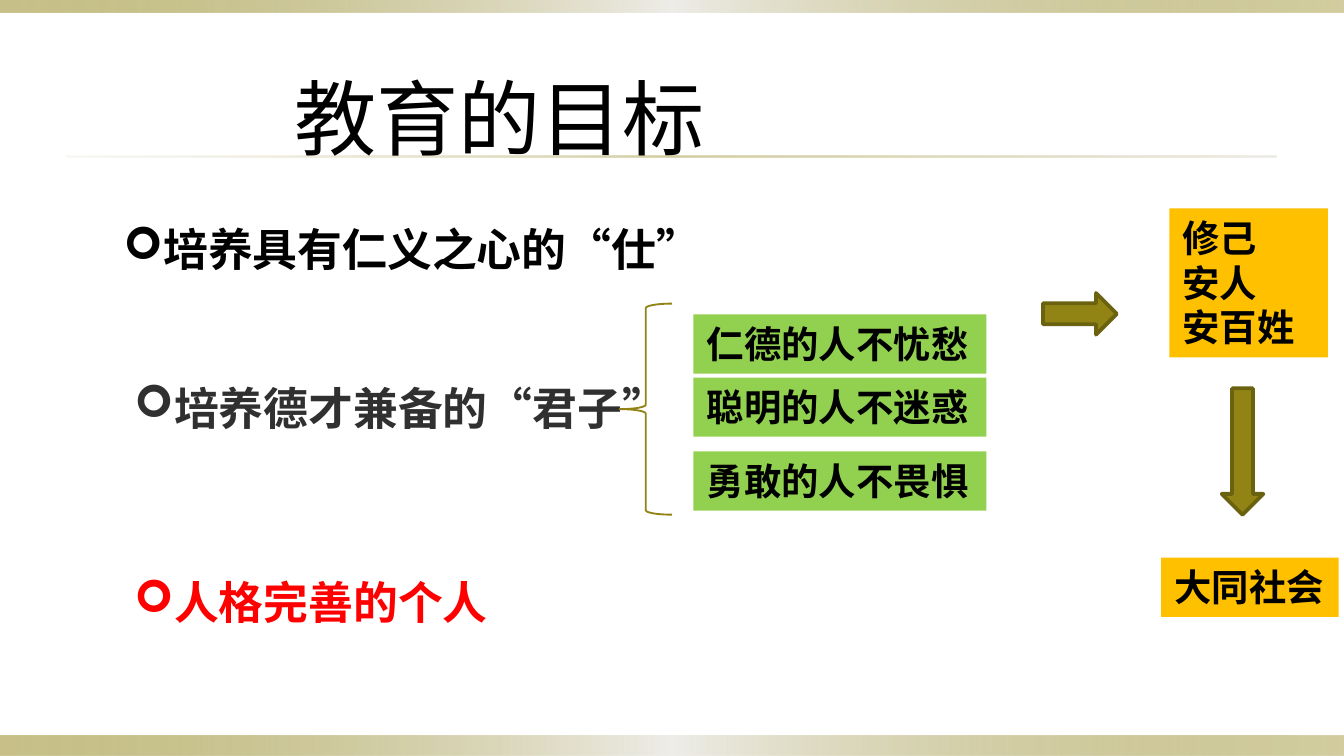
from lxml.etree import SubElement
from pptx import Presentation
from pptx.dml.color import RGBColor
from pptx.enum.shapes import MSO_SHAPE as Shape
from pptx.enum.text import MSO_ANCHOR as Anchor, MSO_AUTO_SIZE as AutoSize
from pptx.oxml.ns import qn
from pptx.util import Inches, Pt

FONT = "Noto Sans CJK SC"
BLACK, OLIVE, DARK_OLIVE = "000000", "918415", "6B6210"
GREEN, AMBER = "92D050", "FFC000"
CELL = Inches(0.1)  # square grid cell
COLUMNS, ROWS = 100, 56.25
BAND = [(0, OLIVE, 50), (50, "EEEDE8", 100), (100, OLIVE, 40)]
RULE = [(0, "DCD9CC", 20), (50, OLIVE, 40), (100, "DCD9CC", 50)]


def cells(*counts):
    return [round(count * CELL) for count in counts]


def color(code):
    return RGBColor.from_string(code)


def add_block(page, kind, place, fill=None, line=None, weight=1):
    """Add a preset shape; place is column, row, width and height in cells."""
    block = page.shapes.add_shape(kind, *cells(*place))
    block.shadow.inherit = False
    if fill:
        block.fill.solid()
        block.fill.fore_color.rgb = color(fill)
    else:
        block.fill.background()
    if line:
        block.line.color.rgb = color(line)
        block.line.width = Pt(weight)
    else:
        block.line.fill.background()
    return block


def add_gradient_bar(page, place, stops):
    """Add a bar with a horizontal gradient of (position, colour, opacity)."""
    bar = add_block(page, Shape.RECTANGLE, place)
    bar.fill.gradient()
    bar.fill.gradient_angle = 0
    stop_list = bar.fill._fill._gradFill.find(qn("a:gsLst"))
    for stop in list(stop_list):
        stop_list.remove(stop)
    for position, code, opacity in stops:
        stop = SubElement(stop_list, qn("a:gs"), pos=str(position * 1000))
        tint = SubElement(stop, qn("a:srgbClr"), val=code)
        SubElement(tint, qn("a:alpha"), val=str(opacity * 1000))


def write(box, lines, size, code=BLACK, bold=True, wrap=False, anchor=Anchor.TOP):
    frame = box.text_frame
    frame.word_wrap = wrap
    frame.auto_size = AutoSize.SHAPE_TO_FIT_TEXT
    frame.vertical_anchor = anchor
    frame.text = "\n".join(lines)
    for para in frame.paragraphs:
        para.alignment = 1  # left
        for span in para.runs:
            span.font.name = FONT
            span.font.size = Pt(size)
            span.font.bold = bold
            span.font.color.rgb = color(code)
            latin = span.font._element.find(qn("a:latin"))
            latin.addnext(latin.makeelement(qn("a:ea"), typeface=FONT))


def add_goal(page, column, row, text, code):
    """Add one bulleted goal."""
    box = page.shapes.add_textbox(*cells(column, row, 94.1, 5))
    write(box, [text], 24, code, wrap=True, anchor=Anchor.MIDDLE)
    para = box.text_frame.paragraphs[0]
    para.space_after = Pt(18)
    settings = para._p.get_or_add_pPr()
    settings.set("marL", "0")
    settings.set("indent", str(Inches(0.31)))
    SubElement(settings, qn("a:buFont"), typeface="Wingdings")
    SubElement(settings, qn("a:buChar"), char="➢")


def add_label(page, place, lines, fill, wrap=False):
    write(add_block(page, Shape.RECTANGLE, place, fill), lines, 20, wrap=wrap)


def main():
    deck = Presentation()
    deck.slide_width, deck.slide_height = cells(COLUMNS, ROWS)
    page = deck.slides.add_slide(deck.slide_layouts[6])

    # Edge bands and the rule under the title
    add_gradient_bar(page, (0, ROWS - 1.5, COLUMNS, 1.5), BAND)
    add_gradient_bar(page, (0, 0, COLUMNS, 0.9), BAND)
    add_gradient_bar(page, (5, 11.6, 90, 0.15), RULE)

    # Title
    title = page.shapes.add_textbox(*cells(20.9, 4.5, 32.9, 8.4))
    write(title, ["教育的目标"], 44, bold=False)

    # Goals
    add_goal(page, 5.1, 16, "培养具有仁义之心的“仕”", BLACK)
    add_goal(page, 5.9, 27.8, "培养德才兼备的“君子”", "303030")
    add_goal(page, 5.9, 42.3, "人格完善的个人", "FF0000")

    # Three virtues, gathered by a brace
    virtues = [(23.4, "仁德的人不忧愁"), (28.1, "聪明的人不迷惑"), (33.6, "勇敢的人不畏惧")]
    for row, virtue in virtues:
        add_label(page, (51.6, row, 21.8, 4.4), [virtue], GREEN)
    add_block(page, Shape.LEFT_BRACE, (46.1, 22.6, 3.9, 15.7), line=OLIVE)

    # Outcomes and the arrows leading to them
    add_label(page, (87, 15.5, 11.8, 11.1), ["修己", "安人", "安百姓"], AMBER, wrap=True)
    add_label(page, (86.4, 41.5, 13.2, 4.4), ["大同社会"], AMBER)
    arrows = [(Shape.RIGHT_ARROW, (77.6, 21.8, 5.5, 3.1)),
              (Shape.DOWN_ARROW, (90.9, 28.9, 3.1, 9.4))]
    for kind, place in arrows:
        add_block(page, kind, place, OLIVE, DARK_OLIVE, 2)

    deck.save("out.pptx")


if __name__ == "__main__":
    main()
